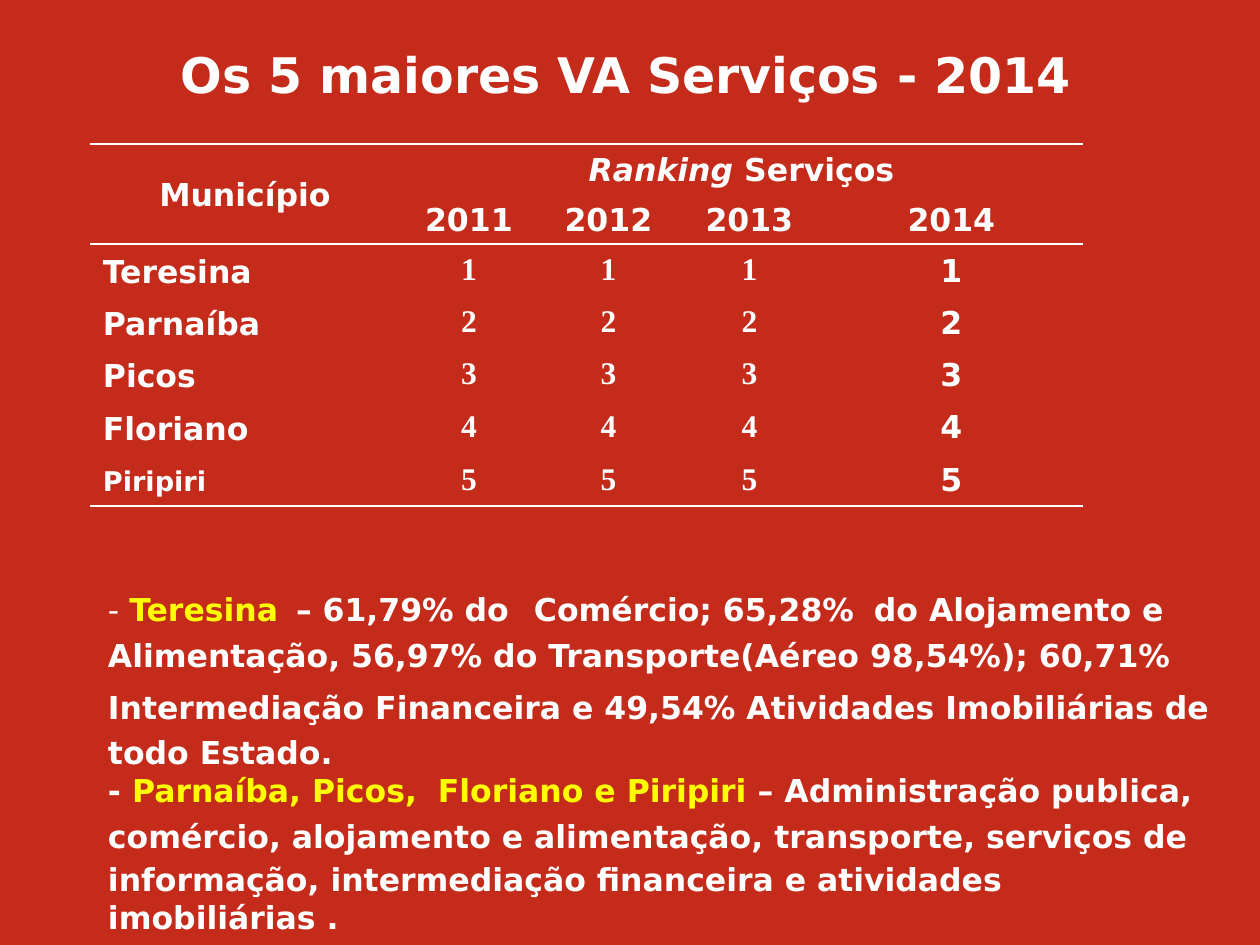
from lxml.etree import SubElement
from pptx import Presentation
from pptx.dml.color import RGBColor
from pptx.enum.shapes import MSO_CONNECTOR, MSO_SHAPE
from pptx.enum.text import MSO_ANCHOR, PP_ALIGN
from pptx.oxml import parse_xml
from pptx.oxml.ns import nsdecls, qn
from pptx.util import Emu, Pt

PX = 914400 // 126
SLIDE_WIDTH, SLIDE_HEIGHT = 1260, 945
COLORS = {"red": "C42B1A", "white": "FFFFFF", "yellow": "FFFF00"}
SANS, SERIF = "DejaVu Sans", "Times New Roman"

TITLE = "Os 5 maiores VA Serviços - 2014"
YEARS = ["2011", "2012", "2013", "2014"]
CITIES = ["Teresina", "Parnaíba", "Picos", "Floriano", "Piripiri"]
RANKS = [[str(rank)] * len(YEARS) for rank in range(1, 6)]

TABLE_LEFT, TABLE_TOP = 90, 144
COL_WIDTHS = [310, 138, 141, 141, 263]
ROW_HEIGHTS = [50, 50, 52, 52, 52, 53, 53]
RULED_ROWS = [0, 2, len(ROW_HEIGHTS)]

# Each note: top, then paragraphs of (format, tab stops in px, runs)
NOTES = [
    (594, [
        ({"line_spacing": Pt(19.6), "space_before": Pt(1)}, [188, 426, 766], [
            ("- ", {"bold": False}),
            ("Teresina", {"color": "yellow"}),
            ("\t– 61,79% do\tComércio; 65,28%\tdo Alojamento e", {})]),
        ({"line_spacing": Pt(19.6), "space_before": Pt(6.3)}, [], [
            ("Alimentação, 56,97% do Transporte(Aéreo 98,54%); 60,71%", {})]),
        ({"line_spacing": 1.2, "space_before": Pt(3.8)}, [], [
            ("Intermediação Financeira e 49,54% Atividades Imobiliárias "
             "de todo Estado.", {})]),
    ]),
    (775, [
        ({"line_spacing": Pt(19.6), "space_before": Pt(1)}, [330], [
            ("- ", {}),
            ("Parnaíba, Picos,\tFloriano e Piripiri ", {"color": "yellow"}),
            ("– Administração publica,", {})]),
        ({"line_spacing": Pt(19.6), "space_before": Pt(6.3)}, [], [
            ("comércio, alojamento e alimentação, transporte, serviços de", {})]),
        ({"line_spacing": 1.01, "space_before": Pt(3.1)}, [], [
            ("informação, intermediação financeira e atividades "
             "imobiliárias .", {})]),
    ]),
]


def px(n):
    return Emu(n * PX)


def rgb(name):
    return RGBColor.from_string(COLORS[name])


def add_run(p, text, color="white", size=18, name=SANS, bold=True, italic=False):
    r = p.add_run()
    r.text = text
    fmt = {"name": name, "size": Pt(size), "bold": bold, "italic": italic}
    for key, value in fmt.items():
        setattr(r.font, key, value)
    r.font.color.rgb = rgb(color)


def format_paragraph(p, fmt, tabs=()):
    for key, value in fmt.items():
        setattr(p, key, value)
    if tabs:
        tab_list = SubElement(p._p.get_or_add_pPr(), qn("a:tabLst"))
        for stop in tabs:
            SubElement(tab_list, qn("a:tab"), pos=str(px(stop)), algn="l")


def add_text(slide, left, top, width, height, paragraphs):
    box = slide.shapes.add_textbox(px(left), px(top), px(width), px(height))
    tf = box.text_frame
    tf.word_wrap = True
    for side in ("left", "right", "top", "bottom"):
        setattr(tf, f"margin_{side}", 0)
    for i, (fmt, tabs, runs) in enumerate(paragraphs):
        p = tf.add_paragraph() if i else tf.paragraphs[0]
        format_paragraph(p, fmt, tabs)
        for text, font in runs:
            add_run(p, text, **font)


def add_backdrop(slide):
    sp = slide.shapes.add_shape(
        MSO_SHAPE.RECTANGLE, 0, 0, px(SLIDE_WIDTH), px(SLIDE_HEIGHT))
    sp.shadow.inherit = False
    sp.fill.solid()
    sp.fill.fore_color.rgb = rgb("red")
    sp.line.fill.background()


def add_rules(slide):
    for row in RULED_ROWS:
        y = px(TABLE_TOP + sum(ROW_HEIGHTS[:row]))
        rule = slide.shapes.add_connector(
            MSO_CONNECTOR.STRAIGHT, px(TABLE_LEFT), y,
            px(TABLE_LEFT + sum(COL_WIDTHS)), y)
        rule.line.color.rgb = rgb("white")
        rule.line.width = Pt(1)
        SubElement(rule._element.spPr, qn("a:effectLst"))


def clear_cell(cell):
    """Remove the fill, borders and margins that the table style gives."""
    cell.fill.background()
    cell.vertical_anchor = MSO_ANCHOR.MIDDLE
    for side in ("left", "right", "top", "bottom"):
        setattr(cell, f"margin_{side}", 0)
    tcPr = cell._tc.get_or_add_tcPr()
    for i, side in enumerate("LRTB"):
        tcPr.insert(i, parse_xml(
            f'<a:ln{side} {nsdecls("a")}><a:noFill/></a:ln{side}>'))


def fill_cell(cell, runs, align=PP_ALIGN.CENTER, drop=4):
    """Write the runs; drop is the top margin that lowers the centred text."""
    cell.margin_top = px(drop)
    p = cell.text_frame.paragraphs[0]
    p.alignment = align
    for text, font in runs:
        add_run(p, text, **font)


def add_ranking(slide):
    table = slide.shapes.add_table(
        len(ROW_HEIGHTS), len(COL_WIDTHS), px(TABLE_LEFT), px(TABLE_TOP),
        px(sum(COL_WIDTHS)), px(sum(ROW_HEIGHTS))).table
    table.first_row = table.horz_banding = False
    for column, width in zip(table.columns, COL_WIDTHS):
        column.width = px(width)
    for row, height in zip(table.rows, ROW_HEIGHTS):
        row.height = px(height)
    for cell in table.iter_cells():
        clear_cell(cell)
    table.cell(0, 0).merge(table.cell(1, 0))
    table.cell(0, 1).merge(table.cell(0, len(YEARS)))

    fill_cell(table.cell(0, 0), [("Município", {})])
    fill_cell(table.cell(0, 1), [("Ranking ", {"italic": True}), ("Serviços", {})])
    for c, year in enumerate(YEARS, 1):
        fill_cell(table.cell(1, c), [(year, {})])
    for r, (city, ranks) in enumerate(zip(CITIES, RANKS), 2):
        size = 15.5 if city == CITIES[-1] else 18
        table.cell(r, 0).margin_left = px(13)
        fill_cell(table.cell(r, 0), [(city, {"size": size})], PP_ALIGN.LEFT, 6)
        for c, rank in enumerate(ranks, 1):
            name, drop = (SANS, 3) if c == len(YEARS) else (SERIF, 0)
            fill_cell(table.cell(r, c), [(rank, {"name": name})], drop=drop)


def main():
    prs = Presentation()
    prs.slide_width, prs.slide_height = px(SLIDE_WIDTH), px(SLIDE_HEIGHT)
    s = prs.slides.add_slide(prs.slide_layouts[6])
    add_backdrop(s)
    add_rules(s)
    title_format = {"line_spacing": Pt(30), "space_before": Pt(1.5)}
    add_text(s, 181, 51, 920, 53, [(title_format, [], [(TITLE, {"size": 28})])])
    add_ranking(s)
    for top, paragraphs in NOTES:
        add_text(s, 108, top, 1107, 170, paragraphs)
    prs.save("out.pptx")


if __name__ == "__main__":
    main()
